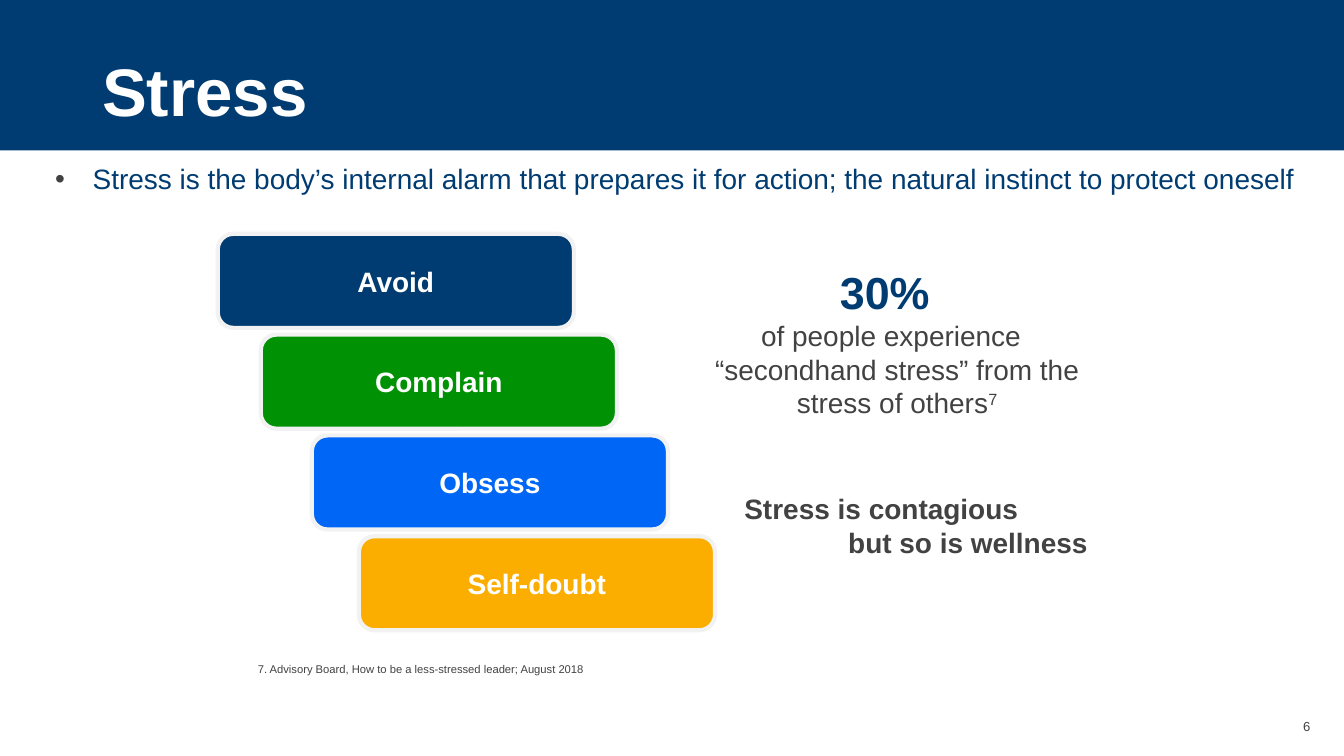
from dataclasses import dataclass

from lxml.etree import SubElement
from pptx import Presentation
from pptx.dml.color import RGBColor
from pptx.enum.shapes import MSO_SHAPE as Shape
from pptx.enum.text import MSO_ANCHOR as Anchor, PP_ALIGN as Align
from pptx.oxml.ns import qn
from pptx.util import Inches, Pt


@dataclass(frozen=True)
class Theme:
    font: str = "Arial"
    navy: str = "003C71"
    green: str = "009104"
    blue: str = "0066F5"
    amber: str = "FCAE00"
    white: str = "FFFFFF"
    outline: str = "F2F2F2"
    gray: str = "424242"
    title: float = 36
    figure: float = 24
    body: float = 15
    number: float = 7
    note: float = 6


THEME = Theme()


def rgb(color):
    return RGBColor.from_string(color)


def set_frame(shape, anchor, margins):
    frame = shape.text_frame
    frame.word_wrap = True
    frame.vertical_anchor = anchor
    (frame.margin_left, frame.margin_top,
     frame.margin_right, frame.margin_bottom) = map(Inches, margins)
    return frame


def add_text_box(page, left, top, width, height,
                 anchor=Anchor.TOP, margins=(0, 0, 0, 0)):
    box = page.shapes.add_textbox(*map(Inches, (left, top, width, height)))
    return set_frame(box, anchor, margins)


def set_indent(para, left, first=0):
    properties = para._p.get_or_add_pPr()
    properties.set("marL", str(Inches(left)))
    properties.set("indent", str(Inches(first)))
    return properties


def add_bullet(para, color):
    properties = set_indent(para, 0.28, -0.28)
    bullet_color = SubElement(properties, qn("a:buClr"))
    SubElement(bullet_color, qn("a:srgbClr")).set("val", color)
    SubElement(properties, qn("a:buFont")).set("typeface", THEME.font)
    SubElement(properties, qn("a:buChar")).set("char", "•")


def write(para, text, size, color, bold=False, align=Align.LEFT):
    para.add_run().text = text
    para.alignment = align
    font = para.font
    font.name = THEME.font
    font.size = Pt(size)
    font.bold = bold
    font.color.rgb = rgb(color)


def add_block(page, kind, left, top, width, height, fill):
    block = page.shapes.add_shape(kind, *map(Inches, (left, top, width, height)))
    block.shadow.inherit = False
    block.fill.solid()
    block.fill.fore_color.rgb = rgb(fill)
    block.line.fill.background()
    return block


def add_header(page, text):
    add_block(page, Shape.RECTANGLE, 0, 0, 10, 1.12, THEME.navy)
    frame = add_text_box(page, 0.76, 0.41, 8.74, 0.52,
                         Anchor.MIDDLE, (0, 0.05, 0, 0.05))
    write(frame.paragraphs[0], text, THEME.title, THEME.white, True)


def add_definition(page, text):
    frame = add_text_box(page, 0.41, 0.92, 9.28, 0.52,
                         Anchor.MIDDLE, (0, 0.2, 0, 0))
    para = frame.paragraphs[0]
    add_bullet(para, THEME.gray)
    para.line_spacing = 1.4
    write(para, text, THEME.body, THEME.navy)


def add_card(page, left, top, text, fill):
    card = add_block(page, Shape.ROUNDED_RECTANGLE, left, top, 2.65, 0.7, fill)
    card.line.color.rgb = rgb(THEME.outline)
    card.line.width = Pt(2.25)
    frame = set_frame(card, Anchor.MIDDLE, (0.04, 0.05, 0.04, 0.05))
    write(frame.paragraphs[0], text, THEME.body, THEME.white, True, Align.CENTER)


def add_statistic(page, figure, text, reference):
    frame = add_text_box(page, 5.15, 1.84, 2.96, 1.41, Anchor.MIDDLE)
    heading, detail = frame.paragraphs[0], frame.add_paragraph()
    for para in (heading, detail):
        set_indent(para, 0.09, -0.28)
    write(heading, figure, THEME.figure, THEME.navy, True, Align.CENTER)
    write(detail, text, THEME.body, THEME.gray, align=Align.CENTER)
    span = detail.add_run()
    span.text = reference
    span._r.get_or_add_rPr().set("baseline", "30000")


def add_message(page, first, second):
    frame = add_text_box(page, 5.44, 3.61, 2.81, 0.61,
                         margins=(0.1, 0.05, 0.1, 0.05))
    write(frame.paragraphs[0], first, THEME.body, THEME.gray, True)
    write(frame.add_paragraph(), second, THEME.body, THEME.gray, True, Align.RIGHT)


def add_footnote(page, text):
    frame = add_text_box(page, 1.73, 4.88, 6.71, 0.2,
                         margins=(0.1, 0.05, 0.1, 0.05))
    set_indent(frame.paragraphs[0], 0.09)
    write(frame.paragraphs[0], text, THEME.note, THEME.gray)


def add_page_number(page, text):
    frame = add_text_box(page, 9.47, 5.35, 0.28, 0.11, Anchor.BOTTOM)
    write(frame.paragraphs[0], text, THEME.number, THEME.gray, align=Align.RIGHT)


def main():
    deck = Presentation()
    deck.slide_width = Inches(10)
    deck.slide_height = deck.slide_width * 9 // 16
    page = deck.slides.add_slide(deck.slide_layouts[6])

    add_header(page, "Stress")
    add_definition(page, "Stress is the body’s internal alarm that prepares it "
                         "for action; the natural instinct to protect oneself")
    reactions = [
        (1.62, "Avoid", THEME.navy),
        (1.94, "Complain", THEME.green),
        (2.32, "Obsess", THEME.blue),
        (2.67, "Self-doubt", THEME.amber),
    ]
    for row, (left, text, fill) in enumerate(reactions):
        add_card(page, left, 1.74 + 0.75 * row, text, fill)
    add_statistic(page, "30% ", "of people experience “secondhand stress” "
                                "from the stress of others", "7")
    add_footnote(page, "7. Advisory Board, How to be a less-stressed leader; August 2018")
    add_message(page, "Stress is contagious", "but so is wellness ")
    add_page_number(page, "6")

    deck.save("out.pptx")


if __name__ == "__main__":
    main()
